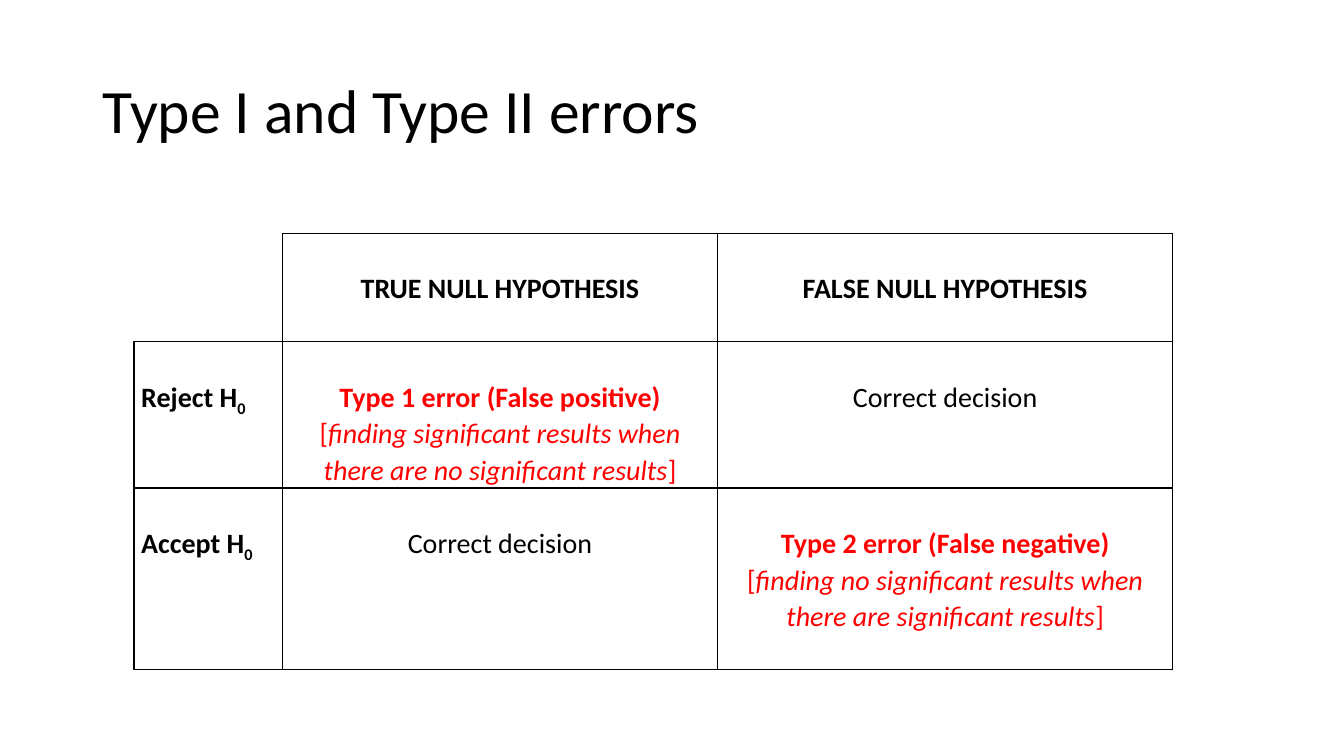
from dataclasses import dataclass

import lxml.etree
import pptx
import pptx.dml.color
import pptx.enum.text
import pptx.oxml.ns
import pptx.util

Inches = pptx.util.Inches
Pt = pptx.util.Pt
RGB = pptx.dml.color.RGBColor
ALIGN = pptx.enum.text.PP_ALIGN
ANCHOR = pptx.enum.text.MSO_ANCHOR


@dataclass(frozen=True)
class Theme:
    """Colours, type and line settings of the slide."""
    font: str = "Calibri"
    ink: str = "000000"
    error: str = "FF0000"
    title_pt: int = 44
    body_pt: int = 20
    border_pt: int = 1
    line_spacing: float = 1.07


THEME = Theme()
COLUMN_WIDTHS = (1.47, 4.32, 4.51)
ROW_HEIGHTS = (1.07, 1.43, 1.8)
BOLD, ITALIC, SUBSCRIPT = "bold", "italic", "subscript"


def style_paragraph(p, size, color, align, spacing):
    """Set the type and layout shared by a whole paragraph."""
    p.alignment = align
    p.line_spacing = spacing
    p.font.name = THEME.font
    p.font.size = Pt(size)
    p.font.color.rgb = RGB.from_string(color)


def add_runs(p, runs):
    """Fill a paragraph with (text, styles) runs."""
    p.font.bold = all(BOLD in styles for _, styles in runs)
    for text, styles in runs:
        r = p.add_run()
        r.text = text
        if ITALIC in styles:
            r.font.italic = True
        if SUBSCRIPT in styles:
            r._r.get_or_add_rPr().set("baseline", "-25000")


def set_borders(cell, visible):
    """Draw the named cell edges and clear the others."""
    tcPr = cell._tc.get_or_add_tcPr()
    qn = pptx.oxml.ns.qn
    for edge in "LRTB":
        ln = lxml.etree.SubElement(tcPr, qn(f"a:ln{edge}"))
        if edge in visible:
            ln.set("w", str(Pt(THEME.border_pt)))
            fill = lxml.etree.SubElement(ln, qn("a:solidFill"))
            lxml.etree.SubElement(fill, qn("a:srgbClr")).set("val", THEME.ink)
        else:
            lxml.etree.SubElement(ln, qn("a:noFill"))


def header(text):
    """Return the content of a column heading."""
    return THEME.ink, [[(text, {BOLD})]]


def row_label(verb):
    """Return the content of a row label about the null hypothesis."""
    return THEME.ink, [[(f"{verb} H", {BOLD}), ("0", {BOLD, SUBSCRIPT})]]


def correct():
    """Return the content of a correct outcome."""
    return THEME.ink, [[("Correct decision", set())]]


def error(name, meaning):
    """Return the content of an error outcome."""
    return THEME.error, [[(name, {BOLD})],
                         [("[", set()), (meaning, {ITALIC}), ("]", set())]]


OUTCOMES = (
    (None, header("TRUE NULL HYPOTHESIS"), header("FALSE NULL HYPOTHESIS")),
    (row_label("Reject"),
     error("Type 1 error (False positive)",
           "finding significant results when there are no significant results"),
     correct()),
    (row_label("Accept"),
     correct(),
     error("Type 2 error (False negative)",
           "finding no significant results when there are significant results")),
)


def fill_cell(cell, content, row, col):
    """Format one table cell and write its content."""
    set_borders(cell, "LRTB" if content else "RB")
    cell.fill.background()
    cell.margin_left = cell.margin_right = Inches(0.07)
    cell.margin_top = Inches(0.36 if row else 0)
    cell.margin_bottom = 0
    cell.vertical_anchor = ANCHOR.TOP if row else ANCHOR.MIDDLE
    if not content:
        return
    color, paragraphs = content
    tf = cell.text_frame
    for i, runs in enumerate(paragraphs):
        p = tf.add_paragraph() if i else tf.paragraphs[0]
        style_paragraph(p, THEME.body_pt, color,
                        ALIGN.CENTER if col else ALIGN.LEFT, THEME.line_spacing)
        add_runs(p, runs)


def add_title(slide, text, left, top, width, height):
    """Place the slide title in the given box."""
    sp = slide.shapes.title
    sp.left, sp.top, sp.width, sp.height = map(Inches, (left, top, width, height))
    tf = sp.text_frame
    tf.vertical_anchor = ANCHOR.MIDDLE
    tf.text = text
    style_paragraph(tf.paragraphs[0], THEME.title_pt, THEME.ink, ALIGN.LEFT, 0.9)


def add_outcome_table(slide, left, top):
    """Build the decision table from its top left corner."""
    table = slide.shapes.add_table(
        len(ROW_HEIGHTS), len(COLUMN_WIDTHS), Inches(left), Inches(top),
        Inches(sum(COLUMN_WIDTHS)), Inches(sum(ROW_HEIGHTS))).table
    table.first_row = table.horz_banding = False
    for column, width in zip(table.columns, COLUMN_WIDTHS):
        column.width = Inches(width)
    for row, height in zip(table.rows, ROW_HEIGHTS):
        row.height = Inches(height)
    for i, contents in enumerate(OUTCOMES):
        for j, content in enumerate(contents):
            fill_cell(table.cell(i, j), content, i, j)


def main():
    """Build and save the presentation."""
    prs = pptx.Presentation()
    prs.slide_width, prs.slide_height = Inches(13.33), Inches(7.5)
    slide = prs.slides.add_slide(prs.slide_layouts.get_by_name("Title Only"))
    add_title(slide, "Type I and Type II errors", 0.92, 0.4, 11.5, 1.45)
    add_outcome_table(slide, 1.33, 2.32)
    prs.save("out.pptx")


if __name__ == "__main__":
    main()
